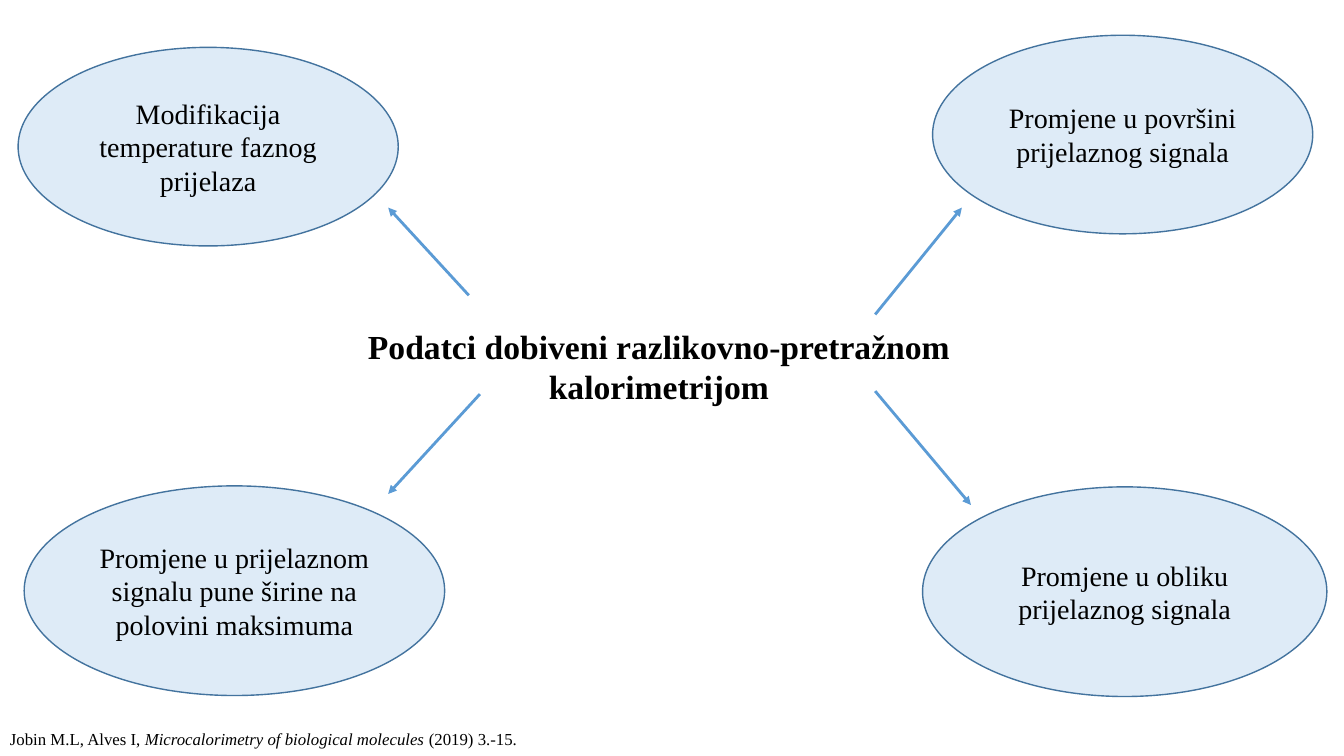
from dataclasses import dataclass

from lxml import etree
from pptx import Presentation
from pptx.dml.color import RGBColor
from pptx.enum.shapes import MSO_CONNECTOR, MSO_SHAPE
from pptx.enum.text import MSO_ANCHOR, MSO_AUTO_SIZE, PP_ALIGN
from pptx.oxml.ns import qn
from pptx.util import Inches, Pt

STRAIGHT = MSO_CONNECTOR.STRAIGHT
ELLIPSE = MSO_SHAPE.OVAL
MIDDLE = MSO_ANCHOR.MIDDLE
GROW = MSO_AUTO_SIZE.SHAPE_TO_FIT_TEXT
LEFT = PP_ALIGN.LEFT
CENTER = PP_ALIGN.CENTER


@dataclass(frozen=True)
class Theme:
    font: str = "Times New Roman"
    ink: str = "000000"
    bubble_fill: str = "DEEBF7"
    bubble_line: str = "43739E"
    arrow: str = "5B9BD5"
    title_size: int = 24
    bubble_size: int = 20
    source_size: int = 12
    bubble_width: int = 1
    arrow_width: int = 2


class SlideBuilder:
    def __init__(self, page, theme):
        self.page = page
        self.theme = theme

    def format_spans(self, para, size, align, bold=False):
        para.alignment = align
        for span in para.runs:
            span.font.name = self.theme.font
            span.font.size = Pt(size)
            span.font.bold = bold
            span.font.color.rgb = RGBColor.from_string(self.theme.ink)

    def text(self, place, spans, size, align=LEFT, bold=False):
        box = self.page.shapes.add_textbox(*map(Inches, place))
        frame = box.text_frame
        frame.word_wrap = True
        frame.auto_size = GROW
        para = frame.paragraphs[0]
        for words, italic in spans:
            span = para.add_run()
            span.text = words
            span.font.italic = italic
        self.format_spans(para, size, align, bold)

    def bubble(self, place, words):
        shape = self.page.shapes.add_shape(ELLIPSE, *map(Inches, place))
        shape.shadow.inherit = False
        shape.fill.solid()
        shape.fill.fore_color.rgb = RGBColor.from_string(self.theme.bubble_fill)
        shape.line.color.rgb = RGBColor.from_string(self.theme.bubble_line)
        shape.line.width = Pt(self.theme.bubble_width)
        frame = shape.text_frame
        frame.text = words
        frame.word_wrap = True
        frame.vertical_anchor = MIDDLE
        self.format_spans(frame.paragraphs[0], self.theme.bubble_size, CENTER)

    def arrow(self, start, end):
        line = self.page.shapes.add_connector(STRAIGHT, *map(Inches, start + end))
        line.line.color.rgb = RGBColor.from_string(self.theme.arrow)
        line.line.width = Pt(self.theme.arrow_width)
        outline = line.line._get_or_add_ln()
        etree.SubElement(outline, qn("a:tailEnd"), type="triangle")
        etree.SubElement(line._element.spPr, qn("a:effectLst"))


FINDINGS = [
    ("Modifikacija temperature faznog prijelaza",
     (0.18, 0.47, 3.77, 1.97), (4.65, 2.93), (3.85, 2.06)),
    ("Promjene u površini prijelaznog signala",
     (9.25, 0.35, 3.77, 1.97), (8.68, 3.12), (9.54, 2.06)),
    ("Promjene u prijelaznom signalu pune širine na polovini maksimuma",
     (0.24, 4.82, 4.17, 2.08), (4.76, 3.91), (3.85, 4.9)),
    ("Promjene u obliku prijelaznog signala",
     (9.15, 4.83, 4.01, 2.08), (8.68, 3.88), (9.63, 5.01)),
]
TITLE = [("Podatci dobiveni razlikovno-pretražnom kalorimetrijom", False)]
SOURCE = [
    ("Jobin M.L, Alves I, ", False),
    ("Microcalorimetry of biological molecules", True),
    (" (2019) 3.-15.", False),
]


def main():
    deck = Presentation()
    deck.slide_width = Inches(13.33)
    deck.slide_height = Inches(7.5)
    page = deck.slides.add_slide(deck.slide_layouts[6])
    theme = Theme()
    builder = SlideBuilder(page, theme)
    builder.text((3.44, 3.18, 6.19, 0.91), TITLE, theme.title_size, CENTER, bold=True)
    for words, place, start, end in FINDINGS:
        builder.bubble(place, words)
        builder.arrow(start, end)
    builder.text((0, 7.18, 6.71, 0.3), SOURCE, theme.source_size)
    deck.save("out.pptx")


if __name__ == "__main__":
    main()
